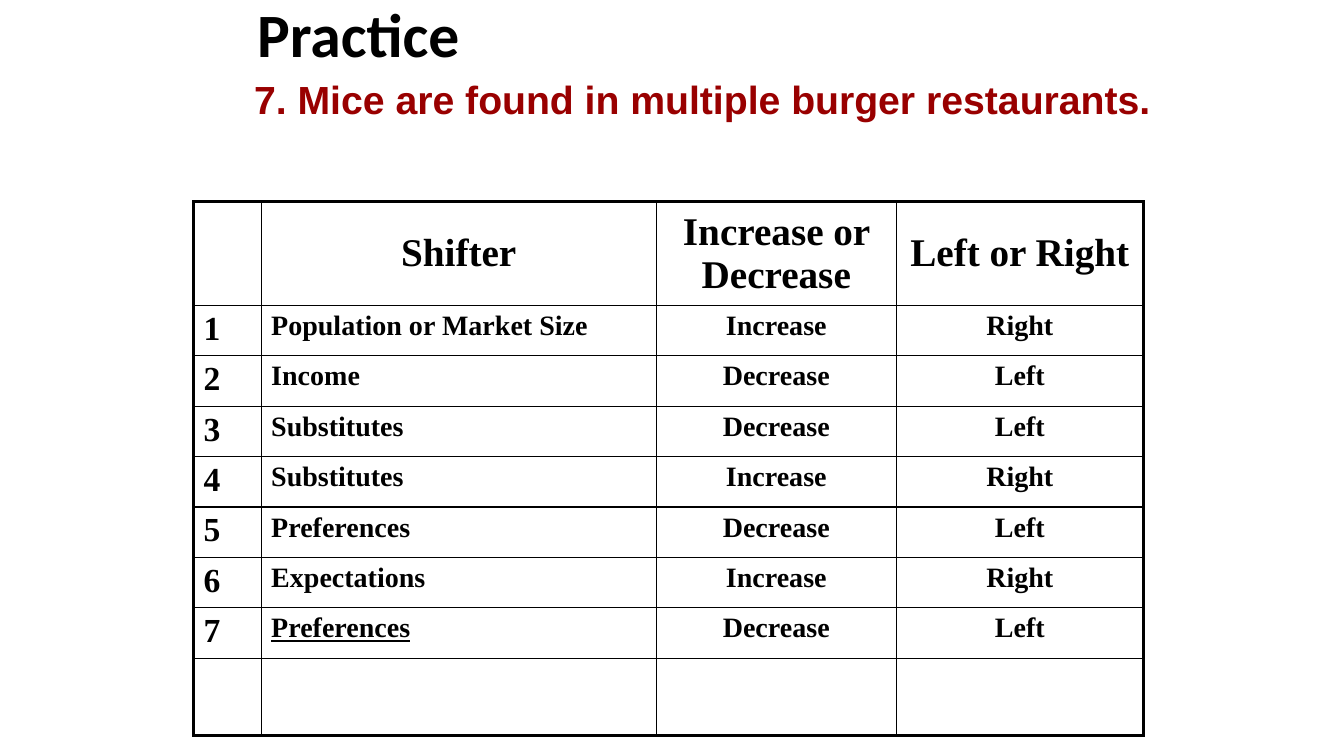
from dataclasses import dataclass
from lxml.etree import SubElement
from pptx import Presentation
from pptx.dml.color import RGBColor as Color
from pptx.enum.text import MSO_ANCHOR as Anchor, MSO_AUTO_SIZE as AutoSize, PP_ALIGN as Align
from pptx.oxml.ns import qn
from pptx.util import Inches, Pt


@dataclass
class Theme:
    ink: str = "000000"
    accent: str = "990000"
    title_font: str = "Calibri"
    question_font: str = "Arial"
    table_font: str = "Times New Roman"
    title_size: int = 44
    heading_size: int = 28
    number_size: int = 24
    answer_size: int = 20
    frame_line: float = 2.25
    grid_line: float = 1


theme = Theme()


def write(frame, text, font, size, color=theme.ink, align=Align.LEFT, anchor=Anchor.TOP,
          spacing=1.0, underline=False):
    frame.vertical_anchor = anchor
    para = frame.paragraphs[0]
    para.alignment = align
    para.line_spacing = spacing
    para.space_before = Pt(0)
    span = para.add_run()
    span.text = text
    span.font.name = font
    span.font.size = Pt(size)
    span.font.bold = True
    span.font.underline = underline
    span.font.color.rgb = Color.from_string(color)


def draw_border(cell, side, width):
    line = SubElement(cell._tc.get_or_add_tcPr(), qn(f"a:ln{side}"), w=str(Pt(width)))
    fill = SubElement(line, qn("a:solidFill"))
    SubElement(fill, qn("a:srgbClr"), val=theme.ink)


deck = Presentation()
deck.slide_width, deck.slide_height = Inches(13.33), Inches(7.5)
page = deck.slides.add_slide(deck.slide_layouts[1])

title = page.shapes.title
title.left, title.top, title.width, title.height = map(Inches, (2.5, -0.25, 8.5, 1.25))
frame = title.text_frame
frame.auto_size = AutoSize.NONE
frame.margin_left = frame.margin_right = Inches(0.05)
write(frame, "Practice", theme.title_font, theme.title_size, anchor=Anchor.MIDDLE, spacing=0.9)

question = page.placeholders[1]
question.left, question.top, question.width, question.height = map(Inches, (1.92, 0.75, 9.75, 0.95))
frame = question.text_frame
frame.auto_size = AutoSize.NONE
layout = frame.paragraphs[0]._p.get_or_add_pPr()
layout.set("marL", str(Inches(0.5)))
layout.set("indent", "0")
SubElement(layout, qn("a:buNone"))
write(frame, "7. Mice are found in multiple burger restaurants.", theme.question_font,
      theme.heading_size, color=theme.accent, spacing=0.9)

headings = ["", "Shifter", "Increase or Decrease", "Left or Right"]
answers = [
    ("Population or Market Size", "Increase"),
    ("Income", "Decrease"),
    ("Substitutes", "Decrease"),
    ("Substitutes", "Increase"),
    ("Preferences", "Decrease"),
    ("Expectations", "Increase"),
    ("Preferences", "Decrease"),
]
direction = {"Increase": "Right", "Decrease": "Left"}
rows = [headings]
for number, (shifter, change) in enumerate(answers, 1):
    rows.append([str(number), shifter, change, direction[change]])
rows.append([""] * len(headings))

widths = [0.67, 3.92, 2.38, 2.45]
heights = [1.03] + [0.5] * len(answers) + [0.77]
last_row, last_column = len(rows) - 1, len(widths) - 1

table = page.shapes.add_table(len(rows), len(widths), Inches(1.92), Inches(2),
                              Inches(sum(widths)), Inches(sum(heights))).table
table.first_row = table.horz_banding = False
for column, width in zip(table.columns, widths):
    column.width = Inches(width)
for row, height in zip(table.rows, heights):
    row.height = Inches(height)

for r, texts in enumerate(rows):
    for c, text in enumerate(texts):
        cell = table.cell(r, c)
        edges = {"L": c == 0, "R": c == last_column, "T": r == 0, "B": r == last_row}
        for side, outer in edges.items():
            draw_border(cell, side, theme.frame_line if outer else theme.grid_line)
        cell.fill.background()
        if not text:
            continue
        heading = r == 0
        size = theme.heading_size if heading else theme.number_size if c == 0 else theme.answer_size
        cell.vertical_anchor = Anchor.MIDDLE if heading else Anchor.TOP
        write(cell.text_frame, text, theme.table_font, size,
              align=Align.CENTER if heading or c > 1 else Align.LEFT,
              anchor=None, underline=r == len(answers) and c == 1)

deck.save("out.pptx")
